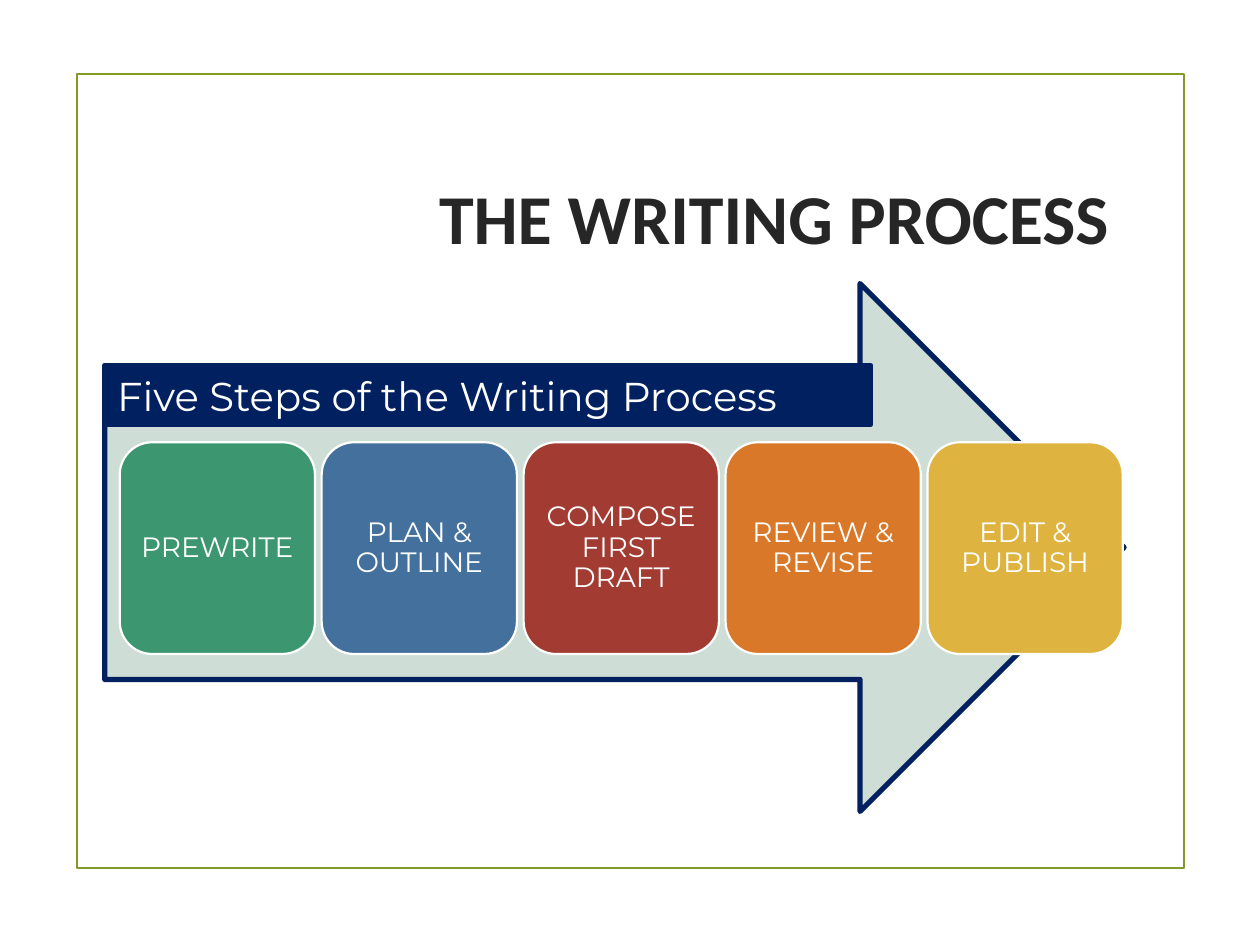
import pptx
import pptx.util
import pptx.dml.color
import pptx.enum.shapes
import pptx.enum.text

Pt = pptx.util.Pt
RGB = pptx.dml.color.RGBColor.from_string
SHAPE = pptx.enum.shapes.MSO_SHAPE
ALIGN = pptx.enum.text.PP_ALIGN
ANCHOR = pptx.enum.text.MSO_ANCHOR

COLORS = {
    "frame": "83992A", "title": "262626", "arrow": "CEDDD5",
    "navy": "002060", "white": "FFFFFF", "green": "3C9770",
    "blue": "44709D", "red": "A23C33", "orange": "D97828", "yellow": "DEB340",
}
STEPS = [
    ("PREWRITE", "green"),
    ("PLAN & OUTLINE", "blue"),
    ("COMPOSE FIRST DRAFT", "red"),
    ("REVIEW & REVISE", "orange"),
    ("EDIT & PUBLISH", "yellow"),
]
STEP_LEFT, STEP_PITCH = 68.4, 115.4

prs = pptx.Presentation()
prs.slide_width, prs.slide_height = Pt(720), Pt(540)
s = prs.slides.add_slide(prs.slide_layouts[5])


def add_box(kind, left, top, width, height, fill, line, weight):
    sp = s.shapes.add_shape(kind, Pt(left), Pt(top), Pt(width), Pt(height))
    sp.shadow.inherit = False
    if fill:
        sp.fill.solid()
        sp.fill.fore_color.rgb = RGB(COLORS[fill])
    else:
        sp.fill.background()
    sp.line.color.rgb = RGB(COLORS[line])
    sp.line.width = Pt(weight)
    return sp


def set_text(sp, text, font, size, color, align, anchor):
    tf = sp.text_frame
    tf.word_wrap = True
    tf.vertical_anchor = anchor
    p = tf.paragraphs[0]
    p.text = text
    p.alignment = align
    p.font.name = font
    p.font.size = Pt(size)
    p.font.color.rgb = RGB(COLORS[color])
    return tf


add_box(SHAPE.RECTANGLE, 43.9, 42.5, 632.9, 453.6, None, "frame", 1.25)

title = s.shapes.title
title.left, title.top, title.width, title.height = Pt(184.3), Pt(72), Pt(515.7), Pt(103)
tf = set_text(title, "THE WRITING PROCESS", "Calibri", 40, "title", ALIGN.CENTER, ANCHOR.MIDDLE)
tf.paragraphs[0].font.bold = True

add_box(SHAPE.RIGHT_ARROW, 59.8, 162, 582.5, 301.7, "arrow", "navy", 3)

for i, (label, color) in enumerate(STEPS):
    sp = add_box(SHAPE.ROUNDED_RECTANGLE, STEP_LEFT + i * STEP_PITCH, 252.7,
                 111.6, 121, color, "white", 1.25)
    tf = set_text(sp, label, "Montserrat", 16, "white", ALIGN.CENTER, ANCHOR.MIDDLE)
    tf.margin_left = tf.margin_right = tf.margin_top = tf.margin_bottom = Pt(5)
    tf.paragraphs[0].line_spacing = 0.9

banner = add_box(SHAPE.RECTANGLE, 59.8, 208.8, 437.8, 33.8, "navy", "navy", 3)
set_text(banner, "Five Steps of the Writing Process", "Montserrat", 23, "white",
         ALIGN.LEFT, ANCHOR.TOP)

prs.save("out.pptx")
